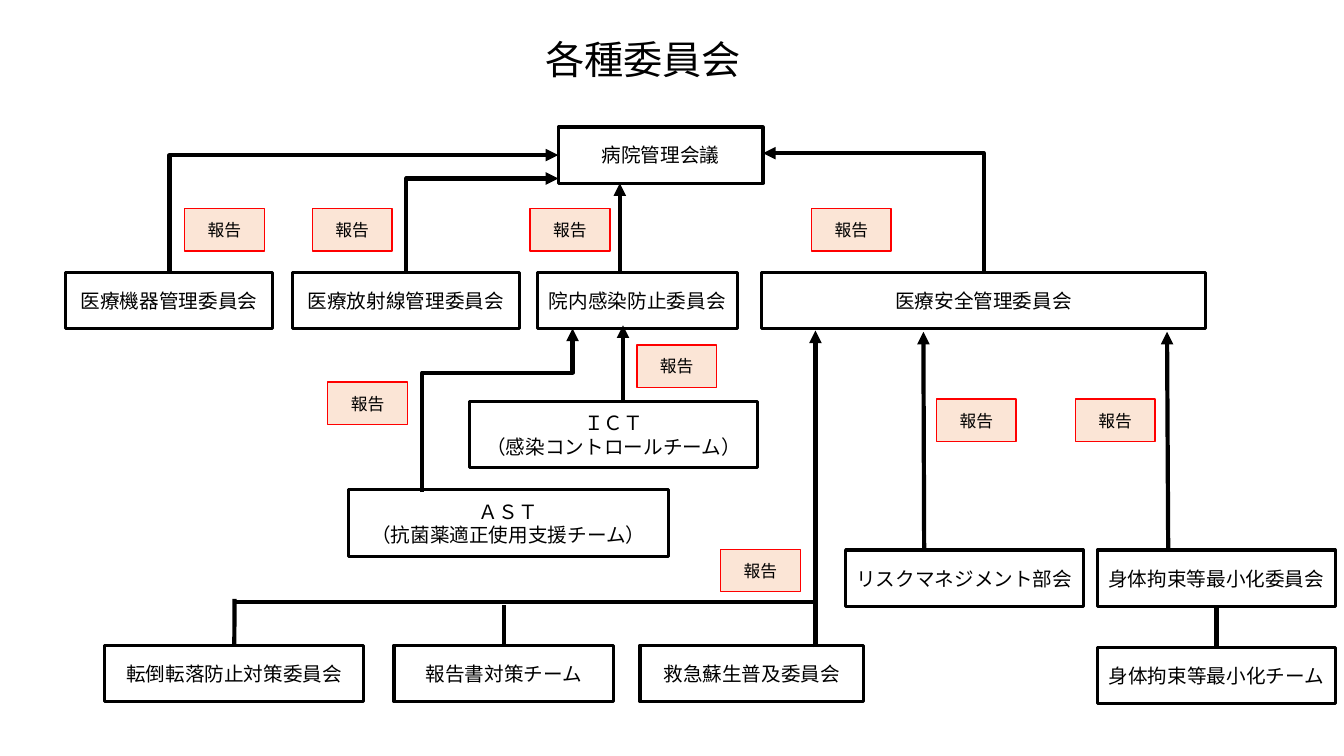
from lxml import etree
from pptx import Presentation
from pptx.dml.color import RGBColor
from pptx.enum.shapes import MSO_CONNECTOR, MSO_SHAPE
from pptx.enum.text import MSO_ANCHOR, MSO_AUTO_SIZE, PP_ALIGN
from pptx.oxml.ns import qn
from pptx.util import Cm, Pt

RECTANGLE = MSO_SHAPE.RECTANGLE
STRAIGHT, ELBOW = MSO_CONNECTOR.STRAIGHT, MSO_CONNECTOR.ELBOW
CENTER, MIDDLE = PP_ALIGN.CENTER, MSO_ANCHOR.MIDDLE
FIT_SHAPE = MSO_AUTO_SIZE.SHAPE_TO_FIT_TEXT
TOP, BOTTOM = 0, 2

BLACK = RGBColor(0x00, 0x00, 0x00)
WHITE = RGBColor(0xFF, 0xFF, 0xFF)
RED = RGBColor(0xFF, 0x00, 0x00)
PEACH = RGBColor(0xFB, 0xE5, 0xD6)

BOX_HEIGHT, TEAM_HEIGHT = 1.42, 1.68
ROW_1, ROW_2, ROW_3, ROW_4 = 3.2, 6.86, 13.86, 16.26

# Name, left, top, width, height in cm
COMMITTEES = [
    ("病院管理会議", 14.07, ROW_1, 5.16, BOX_HEIGHT),
    ("医療機器管理委員会", 1.65, ROW_2, 5.23, BOX_HEIGHT),
    ("医療放射線管理委員会", 7.37, ROW_2, 5.72, BOX_HEIGHT),
    ("院内感染防止委員会", 13.54, ROW_2, 5.05, BOX_HEIGHT),
    ("医療安全管理委員会", 19.2, ROW_2, 11.18, BOX_HEIGHT),
    ("ＩＣＴ\n（感染コントロールチーム）", 11.84, 10.11, 7.26, TEAM_HEIGHT),
    ("ＡＳＴ\n（抗菌薬適正使用支援チーム）", 8.79, 12.34, 8.05, TEAM_HEIGHT),
    ("リスクマネジメント部会", 21.31, ROW_3, 5.99, BOX_HEIGHT),
    ("身体拘束等最小化委員会", 27.66, ROW_3, 5.99, BOX_HEIGHT),
    ("転倒転落防止対策委員会", 2.64, ROW_4, 6.53, BOX_HEIGHT),
    ("報告書対策チーム", 9.93, ROW_4, 5.54, BOX_HEIGHT),
    ("救急蘇生普及委員会", 16.13, ROW_4, 5.64, BOX_HEIGHT),
    ("身体拘束等最小化チーム", 27.66, 16.31, 5.99, BOX_HEIGHT),
]

# Left and top of each report label
REPORTS = [
    (4.65, 5.26), (7.87, 5.26), (13.36, 5.26), (20.45, 5.26),
    (8.26, 9.63), (16.05, 8.69), (18.16, 13.84), (23.6, 10.06), (27.1, 10.06),
]

# Start x, start y, end x, end y
STRAIGHT_ARROWS = [
    (15.62, 6.86, 15.62, 4.62),
    (15.7, 10.11, 15.7, 8.2),
    (20.55, 16.31, 20.55, 8.33),
    (23.29, 13.87, 23.27, 8.36),
    (29.44, 13.87, 29.41, 8.36),
]
CORNER_ARROWS = [
    (4.27, 6.88, 14.07, 3.91),
    (10.24, 6.88, 14.07, 4.5),
    (24.79, 6.86, 19.23, 3.86),
]


class CommitteeChart:
    font = "Arial"
    title_font = "Vollkorn"

    def __init__(self, slide):
        self.slide = slide

    def title(self, text, left, top, width, height):
        box = self.slide.shapes.add_textbox(Cm(left), Cm(top), Cm(width), Cm(height))
        frame = box.text_frame
        frame.word_wrap = False
        frame.auto_size = FIT_SHAPE
        frame.text = text
        self.style(frame.paragraphs[0], self.title_font, 28)

    def style(self, paragraph, name, size):
        paragraph.font.name = name
        paragraph.font.size = Pt(size)
        paragraph.font.color.rgb = BLACK

    def box(self, text, left, top, width, height,
            fill=WHITE, line=BLACK, weight=2.25, size=14):
        shape = self.slide.shapes.add_shape(
            RECTANGLE, Cm(left), Cm(top), Cm(width), Cm(height))
        shape.shadow.inherit = False
        shape.fill.solid()
        shape.fill.fore_color.rgb = fill
        shape.line.color.rgb = line
        shape.line.width = Pt(weight)
        frame = shape.text_frame
        frame.word_wrap = True
        frame.vertical_anchor = MIDDLE
        frame.text = text
        for paragraph in frame.paragraphs:
            paragraph.alignment = CENTER
            self.style(paragraph, self.font, size)
        return shape

    def report(self, left, top):
        self.box("報告", left, top, 2.01, 1.07, PEACH, RED, 1, 12)

    def line(self, x1, y1, x2, y2, arrow=False, kind=STRAIGHT):
        connector = self.slide.shapes.add_connector(kind, Cm(x1), Cm(y1), Cm(x2), Cm(y2))
        connector.line.color.rgb = BLACK
        connector.line.width = Pt(3)
        properties = connector._element.spPr
        if arrow:
            etree.SubElement(properties.find(qn("a:ln")), qn("a:tailEnd"), type="triangle")
        etree.SubElement(properties, qn("a:effectLst"))
        return connector

    def elbow(self, x1, y1, x2, y2, bend=None):
        """Arrow that leaves vertically: a horizontal elbow turned by 90 degrees."""
        middle_x, middle_y = (x1 + x2) / 2, (y1 + y2) / 2
        half_x, half_y = (y2 - y1) / 2, (x1 - x2) / 2
        connector = self.line(middle_x - half_x, middle_y - half_y,
                              middle_x + half_x, middle_y + half_y, True, ELBOW)
        properties = connector._element.spPr
        properties.find(qn("a:xfrm")).set("rot", "5400000")
        geometry = properties.find(qn("a:prstGeom"))
        if bend is None:
            geometry.set("prst", "bentConnector2")
        else:
            adjustments = geometry.find(qn("a:avLst"))
            etree.SubElement(adjustments, qn("a:gd"), name="adj1",
                             fmla=f"val {round(bend * 100000)}")


def main():
    presentation = Presentation()
    presentation.slide_width = Cm(33.87)
    presentation.slide_height = Cm(19.05)
    slide = presentation.slides.add_slide(presentation.slide_layouts[6])
    chart = CommitteeChart(slide)

    # Title, committees and report labels
    chart.title("各種委員会", 13.49, 0.76, 5.51, 1.45)
    boxes = {name: chart.box(name, *place) for name, *place in COMMITTEES}
    for place in REPORTS:
        chart.report(*place)

    # Reporting arrows
    for ends in STRAIGHT_ARROWS:
        chart.line(*ends, arrow=True)
    for ends in CORNER_ARROWS:
        chart.elbow(*ends)
    chart.elbow(10.64, 12.4, 14.43, 8.28, bend=0.73)

    # Shared line of the safety teams
    chart.line(5.92, 15.16, 20.55, 15.16)
    for name, x, end_y in (("転倒転落防止対策委員会", 5.91, 15.09),
                           ("報告書対策チーム", 12.7, 15.24)):
        chart.line(x, ROW_4, x, end_y).begin_connect(boxes[name], TOP)

    # Restraint team under its committee
    link = chart.line(30.66, 16.31, 30.66, 15.28)
    link.begin_connect(boxes["身体拘束等最小化チーム"], TOP)
    link.end_connect(boxes["身体拘束等最小化委員会"], BOTTOM)

    presentation.save("out.pptx")


if __name__ == "__main__":
    main()
